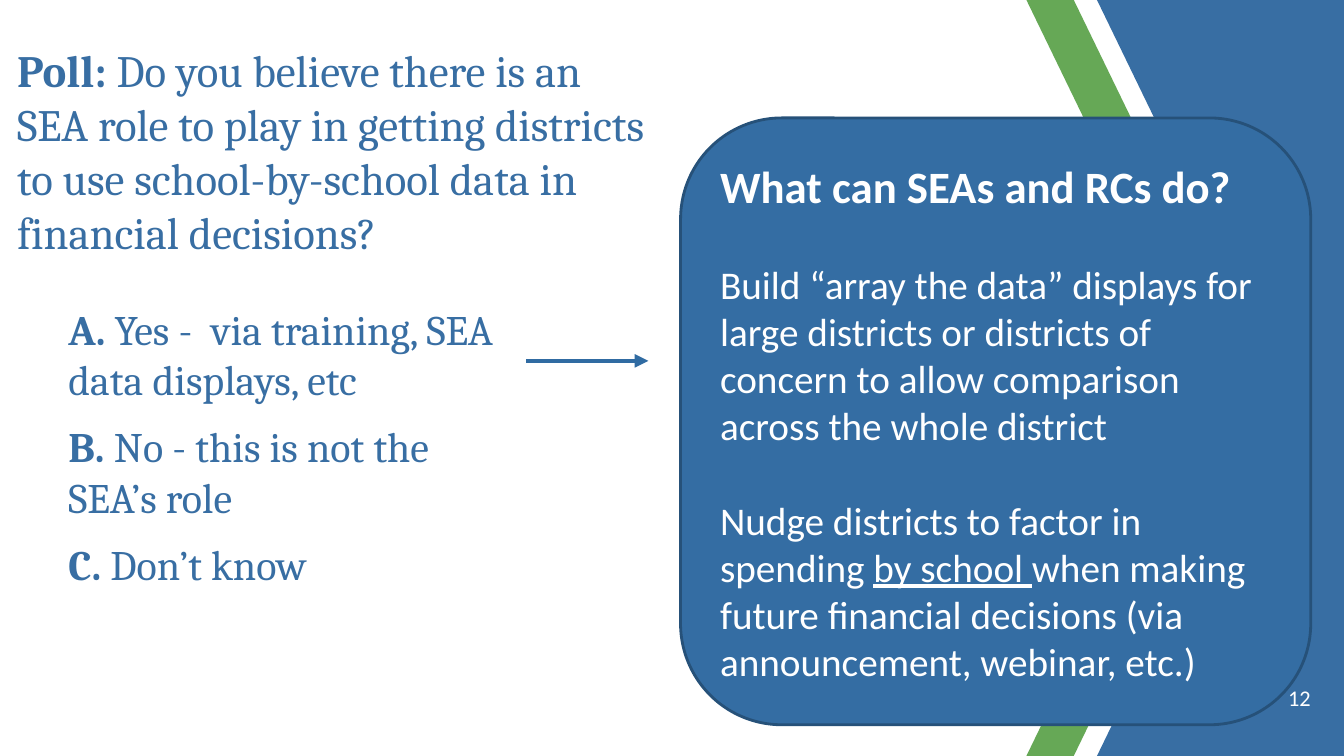
from lxml import etree
from pptx import Presentation
from pptx.dml.color import RGBColor
from pptx.enum.shapes import MSO_CONNECTOR, MSO_SHAPE
from pptx.enum.text import MSO_ANCHOR, PP_ALIGN
from pptx.oxml.ns import qn
from pptx.util import Inches, Pt

ROUND = MSO_SHAPE.ROUNDED_RECTANGLE
LINE = MSO_CONNECTOR.STRAIGHT
TOP, MIDDLE, BOTTOM = MSO_ANCHOR.TOP, MSO_ANCHOR.MIDDLE, MSO_ANCHOR.BOTTOM
LEFT, RIGHT = PP_ALIGN.LEFT, PP_ALIGN.RIGHT

BLUE = RGBColor(0x38, 0x6E, 0xA3)
GREEN = RGBColor(0x56, 0x9F, 0x44)
CARD = RGBColor(0x34, 0x6D, 0xA3)
EDGE = RGBColor(0x26, 0x51, 0x79)
ARROW = RGBColor(0x30, 0x6B, 0xA2)
WHITE = RGBColor(0xFF, 0xFF, 0xFF)

deck = Presentation()
deck.slide_width, deck.slide_height = Inches(13.33), Inches(7.5)
slide = deck.slides.add_slide(deck.slide_layouts[6])
shapes = slide.shapes


def write(shape, paras, size, font="Cambria", color=BLUE, anchor=TOP,
          align=LEFT, inset=None, before=0, after=0):
    frame = shape.text_frame
    frame.word_wrap = True
    frame.vertical_anchor = anchor
    if inset is not None:
        frame.margin_left = frame.margin_right = Inches(inset)
        frame.margin_top = frame.margin_bottom = Inches(inset)
    for i, runs in enumerate(paras):
        para = frame.add_paragraph() if i else frame.paragraphs[0]
        para.alignment = align
        para.space_before = Pt(before if i else 0)
        para.space_after = Pt(after)
        for text, style in runs:
            run = para.add_run()
            run.text = text
            run.font.name = font
            run.font.size = Pt(style.get("size", size))
            run.font.color.rgb = color
            run.font.bold = style.get("bold", False)
            run.font.underline = style.get("line", False)
    return frame


bands = [
    (GREEN, [(10.65, 0), (10.18, 0), (12, 3.75), (10.18, 7.5), (10.65, 7.5), (12.47, 3.75)]),
    (BLUE, [(13.33, 0), (10.88, 0), (12.7, 3.75), (10.88, 7.5), (13.33, 7.5)]),
]
for color, points in bands:
    spots = [(Inches(x), Inches(y)) for x, y in points]
    path = shapes.build_freeform(*spots[0])
    path.add_line_segments(spots[1:], close=True)
    band = path.convert_to_shape()
    band.shadow.inherit = False
    band.fill.solid()
    band.fill.fore_color.rgb = color
    band.line.fill.background()
    if color == GREEN:
        tint = band.fill._xPr.find(".//" + qn("a:srgbClr"))
        etree.SubElement(tint, qn("a:alpha"), val="90000")

BOLD = {"bold": True}

title = shapes.add_textbox(Inches(0.17), Inches(0.56), Inches(6.27), Inches(2.37))
frame = write(title, [[
    ("Poll: ", BOLD),
    ("Do you believe there is an SEA role to play in getting districts "
     "to use school-by-school data in financial decisions?", {}),
]], 32, anchor=MIDDLE, inset=0)
frame.margin_bottom = Inches(0.5)

number = shapes.add_textbox(Inches(12.01), Inches(6.75), Inches(0.99), Inches(0.3))
write(number, [[("12", {})]], 16, font="Calibri", color=WHITE,
      anchor=BOTTOM, align=RIGHT, inset=0)

choices = [
    ("A. ", "Yes -  via training, SEA data displays, etc"),
    ("B. ", "No - this is not the SEA’s role"),
    ("C. ", "Don’t know"),
]
poll = shapes.add_textbox(Inches(0.58), Inches(2.96), Inches(4.45), Inches(3.43))
write(poll, [[(mark, BOLD), (text, {})] for mark, text in choices], 30, after=12)

card = shapes.add_shape(ROUND, Inches(6.75), Inches(1.17), Inches(6.25), Inches(6.02))
card.shadow.inherit = False
card.fill.solid()
card.fill.fore_color.rgb = CARD
card.line.color.rgb = EDGE
card.line.width = Pt(2)
write(card, [
    [("What can SEAs and RCs do?", {"bold": True, "size": 32})],
    [("Build “array the data” displays for large districts or districts of "
      "concern to allow comparison across the whole district", {})],
    [("Nudge districts to factor in spending ", {}),
     ("by school ", {"line": True}),
     ("when making future financial decisions (via announcement, webinar, etc.)", {})],
], 28, font="Calibri", color=WHITE, anchor=MIDDLE, before=34)

arrow = shapes.add_connector(LINE, Inches(5.22), Inches(3.58), Inches(6.43), Inches(3.58))
arrow.line.color.rgb = ARROW
arrow.line.width = Pt(3.25)
etree.SubElement(arrow.line._get_or_add_ln(), qn("a:tailEnd"), type="triangle")
etree.SubElement(arrow._element.spPr, qn("a:effectLst"))

deck.save("out.pptx")
